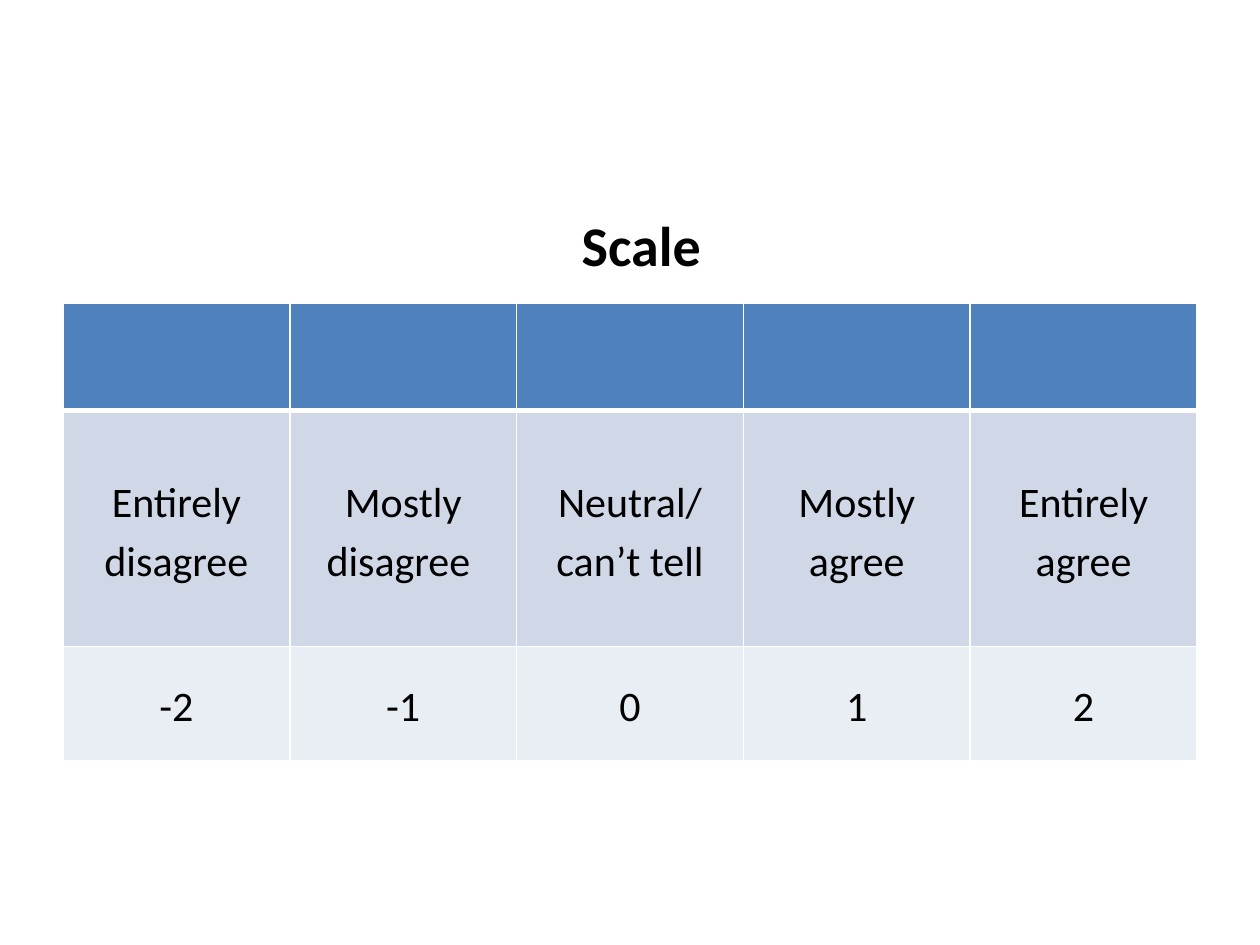
from dataclasses import dataclass

from lxml import etree
from pptx import Presentation
from pptx.dml.color import RGBColor
from pptx.enum.text import MSO_ANCHOR, PP_ALIGN
from pptx.oxml.ns import qn
from pptx.util import Pt

PX = 9144  # 100 px to the inch
CENTER = PP_ALIGN.CENTER
MIDDLE = MSO_ANCHOR.MIDDLE
FONT = "Calibri"
BLACK = RGBColor(0x00, 0x00, 0x00)
WHITE = RGBColor(0xFF, 0xFF, 0xFF)
HEADER_BLUE = RGBColor(0x4F, 0x81, 0xBD)
BAND_DARK = RGBColor(0xD0, 0xD8, 0xE8)
BAND_LIGHT = RGBColor(0xE9, 0xED, 0xF4)
BORDER_WIDTH = 1
HEADER_RULE_WIDTH = 3
COLUMN_WIDTH = 180
CELL_MARGIN = 7


@dataclass(frozen=True)
class ScaleRow:
    texts: tuple[str, ...]
    height: int
    fill: RGBColor
    rule_width: int = BORDER_WIDTH


SCALE_ROWS = (
    ScaleRow(("",) * 5, 85, HEADER_BLUE, HEADER_RULE_WIDTH),
    ScaleRow(
        ("Entirely disagree", "Mostly disagree ", "Neutral/ can’t tell",
         "Mostly agree", "Entirely agree"),
        187, BAND_DARK,
    ),
    ScaleRow(("-2", "-1", "0", "1", "2"), 91, BAND_LIGHT),
)


def format_paragraph(paragraph, size: int, bold: bool = False) -> None:
    paragraph.alignment = CENTER
    for run in paragraph.runs:
        run.font.name = FONT
        run.font.size = Pt(size)
        run.font.bold = bold
        run.font.color.rgb = BLACK


def set_borders(cell, rule_width: int) -> None:
    """Draw white cell borders; the bottom one is rule_width points wide."""
    properties = cell._tc.get_or_add_tcPr()
    widths = {"a:lnL": BORDER_WIDTH, "a:lnR": BORDER_WIDTH,
              "a:lnT": BORDER_WIDTH, "a:lnB": rule_width}
    for position, (tag, width) in enumerate(widths.items()):
        line = etree.Element(qn(tag), w=str(Pt(width)))
        fill = etree.SubElement(line, qn("a:solidFill"))
        etree.SubElement(fill, qn("a:srgbClr"), val=str(WHITE))
        properties.insert(position, line)


def fill_cell(cell, text: str, row: ScaleRow) -> None:
    cell.fill.solid()
    cell.fill.fore_color.rgb = row.fill
    set_borders(cell, row.rule_width)
    cell.vertical_anchor = MIDDLE
    cell.margin_left = cell.margin_right = CELL_MARGIN * PX
    cell.margin_top = cell.margin_bottom = 0
    cell.text_frame.text = text
    paragraph = cell.text_frame.paragraphs[0]
    paragraph.line_spacing = 1.15
    format_paragraph(paragraph, 24)


def add_scale_table(slide, left: int, top: int) -> None:
    column_count = len(SCALE_ROWS[0].texts)
    height = sum(row.height for row in SCALE_ROWS)
    table = slide.shapes.add_table(
        len(SCALE_ROWS), column_count, left * PX, top * PX,
        column_count * COLUMN_WIDTH * PX, height * PX,
    ).table
    for row_index, row in enumerate(SCALE_ROWS):
        table.rows[row_index].height = row.height * PX
        for column_index, text in enumerate(row.texts):
            fill_cell(table.cell(row_index, column_index), text, row)


def add_title(slide, text: str, left: int, top: int, width: int, height: int) -> None:
    box = slide.shapes.add_textbox(left * PX, top * PX, width * PX, height * PX)
    box.text_frame.word_wrap = True
    box.text_frame.text = text
    format_paragraph(box.text_frame.paragraphs[0], 32, bold=True)


def main() -> None:
    presentation = Presentation()
    presentation.slide_width = 1000 * PX
    presentation.slide_height = 750 * PX
    slide = presentation.slides.add_slide(presentation.slide_layouts[6])
    add_scale_table(slide, 50, 241)
    add_title(slide, "Scale", 59, 162, 900, 125)
    presentation.save("out.pptx")


if __name__ == "__main__":
    main()
